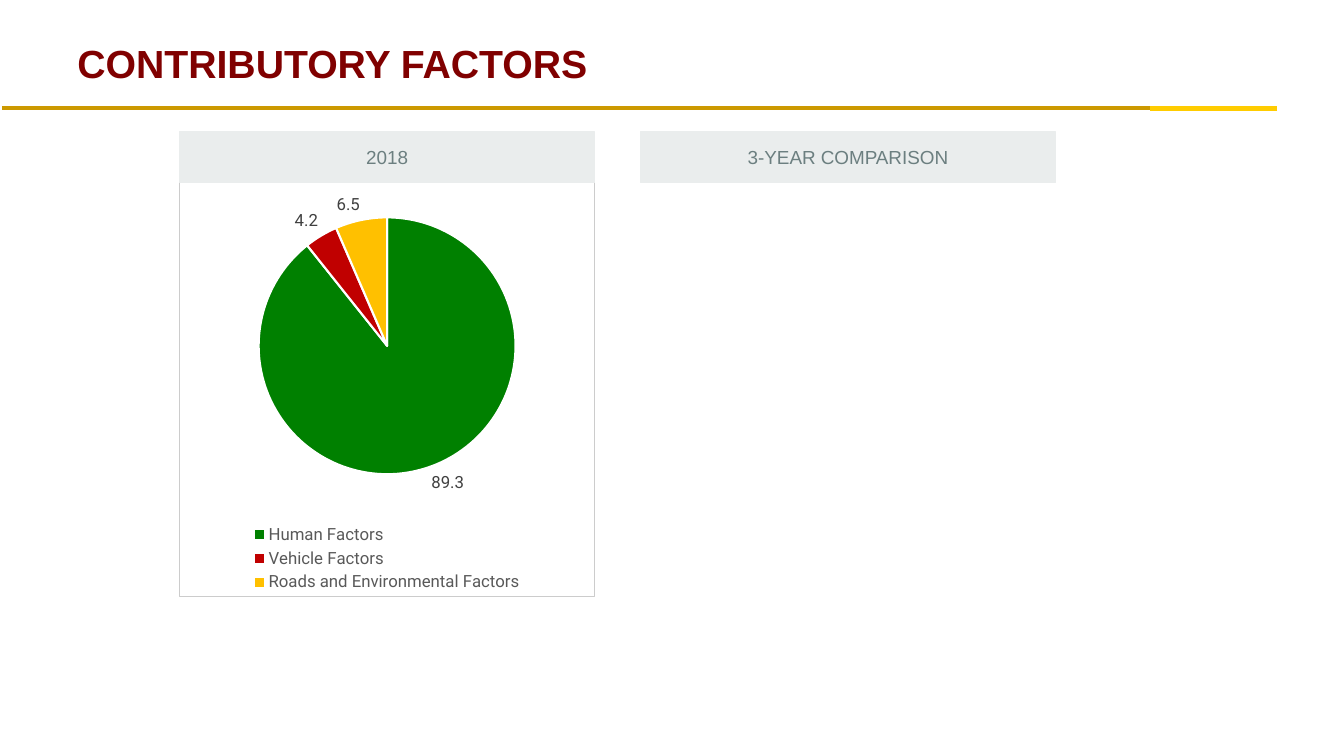
from lxml.etree import SubElement
from pptx import Presentation
from pptx.chart.data import CategoryChartData
from pptx.dml.color import RGBColor
from pptx.enum.chart import XL_CHART_TYPE, XL_LABEL_POSITION, XL_LEGEND_POSITION
from pptx.enum.shapes import MSO_CONNECTOR, MSO_SHAPE
from pptx.enum.text import MSO_ANCHOR, PP_ALIGN
from pptx.oxml import parse_xml
from pptx.oxml.ns import nsdecls, qn
from pptx.util import Inches, Pt


def color(value):
    return RGBColor.from_string(value)


class SlideBuilder:
    text_font = "Arial"
    chart_font = "Roboto"
    panel = "EAEDED"
    panel_text = "6C7F80"
    heading = "800000"

    def __init__(self, slide):
        self.shapes = slide.shapes

    def style(self, font, name, size, ink, bold=False):
        font.name = name
        font.size = Pt(size)
        font.bold = bold
        font.color.rgb = color(ink)

    def rule(self, left, right, top, ink):
        rule = self.shapes.add_connector(
            MSO_CONNECTOR.STRAIGHT, Inches(left), Inches(top), Inches(right), Inches(top))
        rule.line.color.rgb = color(ink)
        rule.line.width = Pt(3)
        SubElement(rule._element.spPr, qn("a:effectLst"))

    def title(self, text, left, top, width, height):
        title = self.shapes.add_textbox(Inches(left), Inches(top), Inches(width), Inches(height))
        frame = title.text_frame
        frame.word_wrap = True
        frame.vertical_anchor = MSO_ANCHOR.MIDDLE
        frame.text = text
        self.style(frame.paragraphs[0].runs[0].font, self.text_font, 28, self.heading, True)

    def header(self, text, left, top, width, height):
        header = self.shapes.add_shape(
            MSO_SHAPE.RECTANGLE, Inches(left), Inches(top), Inches(width), Inches(height))
        header.shadow.inherit = False
        header.fill.solid()
        header.fill.fore_color.rgb = color(self.panel)
        header.line.color.rgb = color(self.panel)
        header.line.width = Pt(0.75)
        frame = header.text_frame
        frame.vertical_anchor = MSO_ANCHOR.MIDDLE
        frame.text = text
        frame.paragraphs[0].alignment = PP_ALIGN.CENTER
        self.style(frame.paragraphs[0].runs[0].font, self.text_font, 13.5, self.panel_text)

    def pie(self, factors, left, top, width, height):
        data = CategoryChartData()
        data.categories = [name for name, share, fill in factors]
        data.add_series("Series 1", [share for name, share, fill in factors])
        chart = self.shapes.add_chart(
            XL_CHART_TYPE.PIE, Inches(left), Inches(top), Inches(width), Inches(height), data).chart
        chart.has_title = False
        self.style(chart.font, self.chart_font, 10, "000000")
        chart.has_legend = True
        chart.legend.position = XL_LEGEND_POSITION.BOTTOM
        chart.legend.include_in_layout = False
        self.style(chart.legend.font, self.chart_font, 12, "595959")

        plot = chart.plots[0]
        plot.vary_by_categories = True
        for index, (name, share, fill) in enumerate(factors):
            wedge = plot.series[0].points[index].format
            wedge.fill.solid()
            wedge.fill.fore_color.rgb = color(fill)
            wedge.line.color.rgb = color("FFFFFF")
            wedge.line.width = Pt(1.5)
        labels = plot.series[0].data_labels
        labels.show_value = True
        labels.show_percentage = False
        labels.position = XL_LABEL_POSITION.OUTSIDE_END
        self.style(labels.font, self.chart_font, 12, "404040")
        self.frame_chart(chart)

    def frame_chart(self, chart):
        space = chart._chartSpace
        space.find(qn("c:chart")).addnext(parse_xml(
            f'<c:spPr {nsdecls("c", "a")}>'
            '<a:solidFill><a:srgbClr val="FFFFFF"/></a:solidFill>'
            '<a:ln w="9525"><a:solidFill><a:srgbClr val="CCCCCC"/></a:solidFill></a:ln>'
            '</c:spPr>'))
        plot_area = space.find(qn("c:chart")).find(qn("c:plotArea"))
        for layout in plot_area.findall(qn("c:layout")):
            plot_area.remove(layout)
        layout = parse_xml(f'<c:layout {nsdecls("c")}/>')
        manual = SubElement(layout, qn("c:manualLayout"))
        settings = {"layoutTarget": "inner", "xMode": "edge", "yMode": "edge",
                    "x": 0.19, "y": 0.09, "w": 0.62, "h": 0.62}
        for tag, value in settings.items():
            SubElement(manual, qn(f"c:{tag}")).set("val", str(value))
        plot_area.insert(0, layout)


def main():
    deck = Presentation()
    deck.slide_width = Inches(13.33)
    deck.slide_height = Inches(7.5)
    builder = SlideBuilder(deck.slides.add_slide(deck.slide_layouts[6]))

    builder.rule(0.02, 12.67, 1.07, "CC9900")
    for top in (1.08, 1.07):
        builder.rule(11.41, 12.67, top, "FFCC00")

    panel_left, panel_width, panel_step = 1.78, 4.12, 4.57
    factors = [
        ("Human Factors", 89.3, "008000"),
        ("Vehicle Factors", 4.2, "C00000"),
        ("Roads and Environmental Factors", 6.5, "FFC000"),
    ]
    builder.pie(factors, panel_left, 1.77, panel_width, 4.15)
    for column, heading in enumerate(("2018", "3-YEAR COMPARISON")):
        builder.header(heading, panel_left + column * panel_step, 1.31, panel_width, 0.5)
    builder.title("CONTRIBUTORY FACTORS", 0.67, 0.3, 12, 0.64)

    deck.save("out.pptx")


if __name__ == "__main__":
    main()
